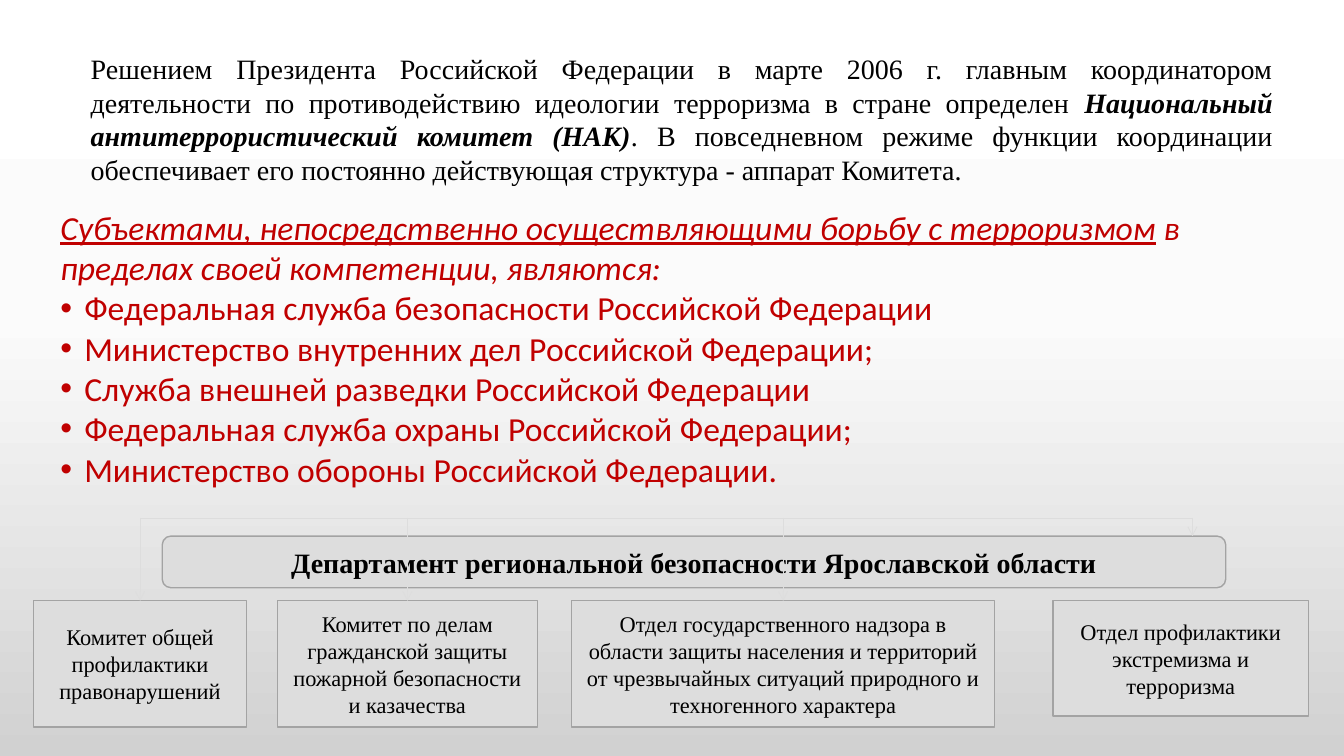
from copy import deepcopy

from lxml import etree
from pptx import Presentation
from pptx.dml.color import RGBColor
from pptx.enum.shapes import MSO_CONNECTOR, MSO_SHAPE
from pptx.enum.text import MSO_ANCHOR, MSO_AUTO_SIZE, PP_ALIGN
from pptx.oxml.ns import qn
from pptx.util import Cm, Pt

STRAIGHT = MSO_CONNECTOR.STRAIGHT
RECTANGLE, ROUNDED = MSO_SHAPE.RECTANGLE, MSO_SHAPE.ROUNDED_RECTANGLE
TOP, MIDDLE = MSO_ANCHOR.TOP, MSO_ANCHOR.MIDDLE
CENTER, JUSTIFY, LEFT = PP_ALIGN.CENTER, PP_ALIGN.JUSTIFY, PP_ALIGN.LEFT
NO_AUTOFIT = MSO_AUTO_SIZE.NONE
TOP_SIDE = 0

BLACK = RGBColor(0x00, 0x00, 0x00)
RED = RGBColor(0xC0, 0x00, 0x00)
BOX_FILL = RGBColor(0xDD, 0xDD, 0xDD)
BOX_LINE = RGBColor(0xA3, 0xA3, 0xA3)
BACKGROUND = [
    (0, RGBColor(0xFF, 0xFF, 0xFF)),
    (0.42, RGBColor(0xFB, 0xFB, 0xFB)),
    (1, RGBColor(0xD1, 0xD1, 0xD1)),
]
SERIF, SANS = "Times New Roman", "Calibri"

# Text, emphasised
LEAD = [
    ("Решением Президента Российской Федерации в марте 2006 г. главным "
     "координатором деятельности по противодействию идеологии терроризма "
     "в стране определен ", False),
    ("Национальный антитеррористический комитет (НАК)", True),
    (". В повседневном режиме функции координации обеспечивает его постоянно "
     "действующая структура - аппарат Комитета.", False),
]
# Text, underlined
AGENCIES_INTRO = [
    ("Субъектами, непосредственно осуществляющими борьбу с терроризмом", True),
    (" в пределах своей компетенции, являются:", False),
]
AGENCIES = [
    "Федеральная служба безопасности Российской Федерации",
    "Министерство внутренних дел Российской Федерации;",
    "Служба внешней разведки Российской Федерации",
    "Федеральная служба охраны Российской Федерации;",
    "Министерство обороны Российской Федерации.",
]
DEPARTMENT = "Департамент региональной безопасности Ярославской области"
# Text, left, width, height in cm
UNITS = [
    ("Комитет общей профилактики правонарушений", 0.84, 5.38, 3.18),
    ("Комитет по делам гражданской защиты пожарной безопасности и казачества",
     6.99, 6.55, 3.18),
    ("Отдел государственного надзора в области защиты населения и территорий "
     "от чрезвычайных ситуаций природного и техногенного характера",
     14.4, 10.67, 3.18),
    ("Отдел профилактики экстремизма и терроризма", 26.54, 6.43, 2.9),
]
UNITS_TOP = Cm(15.14)
DEPARTMENT_TOP = Cm(13.51)
BAR_TOP, BAR_RIGHT = Cm(13.05), Cm(30.05)


def set_font(font, name, size, color):
    font.name, font.size, font.color.rgb = name, Pt(size), color


def paint_background(slide):
    fill = slide.background.fill
    fill.gradient()
    fill.gradient_angle = 270
    stop_list = slide.element.find(".//" + qn("a:gsLst"))
    stop_list.append(deepcopy(stop_list[-1]))
    for stop, (position, color) in zip(fill.gradient_stops, BACKGROUND):
        stop.position = position
        stop.color.rgb = color


def place(placeholder, left, top, width, height):
    placeholder.left, placeholder.top = Cm(left), Cm(top)
    placeholder.width, placeholder.height = Cm(width), Cm(height)
    frame = placeholder.text_frame
    frame.word_wrap = True
    frame.auto_size = NO_AUTOFIT
    frame.vertical_anchor = TOP
    return frame


def set_bullet(paragraph, bullet):
    """Give the paragraph a hanging bullet, or none when bullet is None."""
    properties = paragraph._p.get_or_add_pPr()
    indent = Cm(0.6) if bullet else 0
    properties.set("marL", str(indent))
    properties.set("indent", str(-indent))
    if bullet:
        etree.SubElement(properties, qn("a:buChar"), char=bullet)
    else:
        etree.SubElement(properties, qn("a:buNone"))


def add_box(slide, kind, text, left, top, width, height, size, bold=False):
    box = slide.shapes.add_shape(kind, left, top, width, height)
    box.shadow.inherit = False
    box.fill.solid()
    box.fill.fore_color.rgb = BOX_FILL
    box.line.color.rgb = BOX_LINE
    box.line.width = Pt(1)
    frame = box.text_frame
    frame.word_wrap = True
    frame.vertical_anchor = MIDDLE
    frame.text = text
    paragraph = frame.paragraphs[0]
    paragraph.alignment = CENTER
    font = paragraph.runs[0].font
    set_font(font, SERIF, size, BLACK)
    font.bold = bold
    return box


def add_line(slide, start, end, arrow=True):
    line = slide.shapes.add_connector(STRAIGHT, *start, *end)
    line.line.color.rgb = BOX_FILL
    line.line.width = Pt(0.5)
    if arrow:
        etree.SubElement(line.line._get_or_add_ln(), qn("a:tailEnd"), type="arrow")
    etree.SubElement(line._element.spPr, qn("a:effectLst"))
    return line


def add_lead(slide):
    frame = place(slide.shapes.title, 2.03, 1.17, 30.3, 3.68)
    paragraph = frame.paragraphs[0]
    paragraph.alignment = JUSTIFY
    for text, emphasised in LEAD:
        run = paragraph.add_run()
        run.text = text
        set_font(run.font, SERIF, 20, BLACK)
        run.font.bold = run.font.italic = emphasised


def add_agencies(slide):
    frame = place(slide.placeholders[1], 1.27, 5.08, 31.04, 7.44)
    intro = frame.paragraphs[0]
    for text, underlined in AGENCIES_INTRO:
        run = intro.add_run()
        run.text = text
        run.font.italic = True
        run.font.underline = underlined
    for agency in AGENCIES:
        frame.add_paragraph().text = agency
    for paragraph in frame.paragraphs:
        paragraph.alignment = LEFT
        paragraph.space_before = Pt(0)
        set_bullet(paragraph, None if paragraph is frame.paragraphs[0]
                   or paragraph.text == intro.text else "•")
        for run in paragraph.runs:
            set_font(run.font, SANS, 24, RED)


def add_structure(slide):
    units = [
        add_box(slide, RECTANGLE, text, Cm(left), UNITS_TOP, Cm(width), Cm(height), 16)
        for text, left, width, height in UNITS
    ]
    add_box(slide, ROUNDED, DEPARTMENT, Cm(4.09), DEPARTMENT_TOP,
            Cm(26.8), Cm(1.3), 20, bold=True)

    middles = [unit.left + unit.width // 2 for unit in units]
    add_line(slide, (middles[0], BAR_TOP), (BAR_RIGHT, BAR_TOP), arrow=False)
    add_line(slide, (BAR_RIGHT, BAR_TOP), (BAR_RIGHT, DEPARTMENT_TOP))
    for unit, middle in zip(units[:3], middles):
        branch = add_line(slide, (middle, BAR_TOP), (middle, UNITS_TOP))
        branch.end_connect(unit, TOP_SIDE)


def main():
    presentation = Presentation()
    presentation.slide_width, presentation.slide_height = Cm(33.87), Cm(19.05)
    slide = presentation.slides.add_slide(presentation.slide_layouts[1])
    paint_background(slide)
    add_structure(slide)
    add_lead(slide)
    add_agencies(slide)
    presentation.save("out.pptx")


if __name__ == "__main__":
    main()
